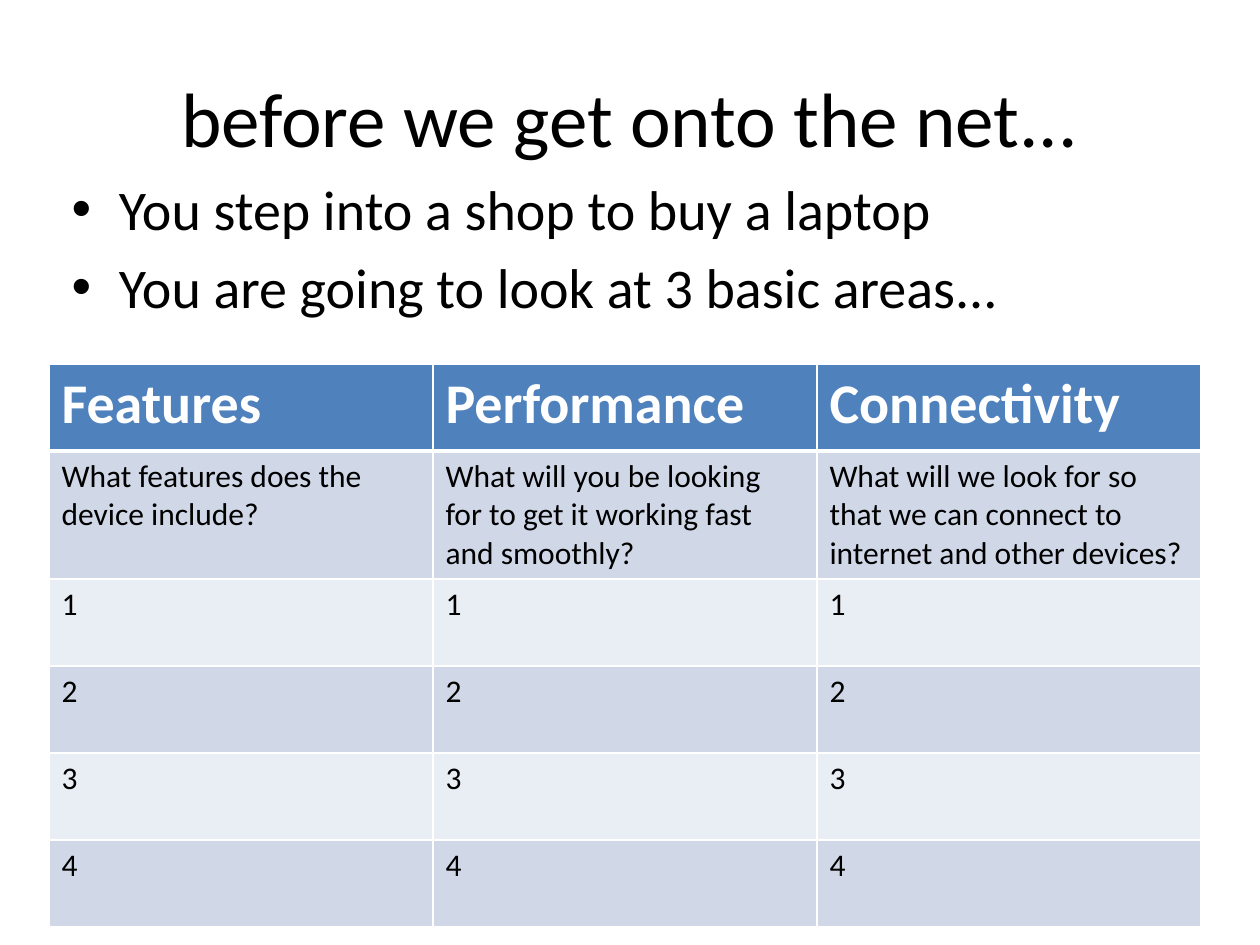
from lxml import etree
from pptx import Presentation
from pptx import util as u
from pptx.dml.color import RGBColor
from pptx.enum import text
from pptx.oxml import ns

# Content
TITLE = "before we get onto the net..."
BULLETS = [
    "You step into a shop to buy a laptop",
    "You are going to look at 3 basic areas...",
]
AREAS = [
    ("Features", "What features does the device include?"),
    ("Performance",
     "What will you be looking for to get it working fast and smoothly?"),
    ("Connectivity",
     "What will we look for so that we can connect to internet and other devices?"),
]
ANSWERS = ["1", "2", "3", "4"]

# Theme and layout, in px
THEME = dict(font="Calibri", ink="000000", white="FFFFFF", header="4F81BD",
             bands=("D0D8E8", "E9EDF4"), title=44, large=32, cell=18)
PX_PER_INCH = 126
TITLE_BOX = (63, 38, 1134, 157)
BODY_BOX = (59, 168, 1134, 168)
TABLE_LEFT, TABLE_TOP, COL_W, ROW_H, QUESTION_H = 49, 364, 384, 87, 128


def px(n):
    return u.Emu(round(n * u.Inches(1) / PX_PER_INCH))


def place(sp, box):
    sp.left, sp.top, sp.width, sp.height = map(px, box)


def write(p, words, size, color=THEME["ink"], bold=False, align=None):
    p.alignment = align
    r = p.add_run()
    r.text = words
    f = r.font
    f.name, f.size, f.bold = THEME["font"], u.Pt(size), bold
    f.color.rgb = RGBColor.from_string(color)


def set_borders(cell, **widths):
    """Give the cell white edges; widths are points by side L, R, T, B."""
    tc_pr = cell._tc.get_or_add_tcPr()
    for i, (side, width) in enumerate(widths.items()):
        ln = etree.Element(ns.qn(f"a:ln{side}"), w=str(u.Pt(width)))
        fill = etree.SubElement(ln, ns.qn("a:solidFill"))
        etree.SubElement(fill, ns.qn("a:srgbClr"), val=THEME["white"])
        tc_pr.insert(i, ln)


prs = Presentation()
prs.slide_width, prs.slide_height = u.Inches(10), u.Inches(7.5)
s = prs.slides.add_slide(prs.slide_layouts[1])

# Title
title = s.shapes.title
place(title, TITLE_BOX)
title.text_frame.vertical_anchor = text.MSO_ANCHOR.MIDDLE
write(title.text_frame.paragraphs[0], TITLE, THEME["title"],
      align=text.PP_ALIGN.CENTER)

# Bullets
body = s.placeholders[1]
place(body, BODY_BOX)
tf = body.text_frame
for i, bullet in enumerate(BULLETS):
    p = tf.add_paragraph() if i else tf.paragraphs[0]
    write(p, bullet, THEME["large"])

# Table of areas: header, question, then numbered answer rows
rows = [*zip(*AREAS), *([n] * len(AREAS) for n in ANSWERS)]
heights = [ROW_H, QUESTION_H] + [ROW_H] * len(ANSWERS)
table = s.shapes.add_table(
    len(rows), len(AREAS), px(TABLE_LEFT), px(TABLE_TOP),
    px(COL_W * len(AREAS)), px(sum(heights))).table
for col in table.columns:
    col.width = px(COL_W)
for i, (row, height) in enumerate(zip(rows, heights)):
    table.rows[i].height = px(height)
    header = i == 0
    for j, words in enumerate(row):
        cell = table.cell(i, j)
        cell.fill.solid()
        cell.fill.fore_color.rgb = RGBColor.from_string(
            THEME["header"] if header else THEME["bands"][(i - 1) % 2])
        set_borders(cell, L=1, R=1, T=3 if i == 1 else 1, B=3 if header else 1)
        write(cell.text_frame.paragraphs[0], words,
              THEME["large"] if header else THEME["cell"],
              color=THEME["white"] if header else THEME["ink"], bold=header)

prs.save("out.pptx")
